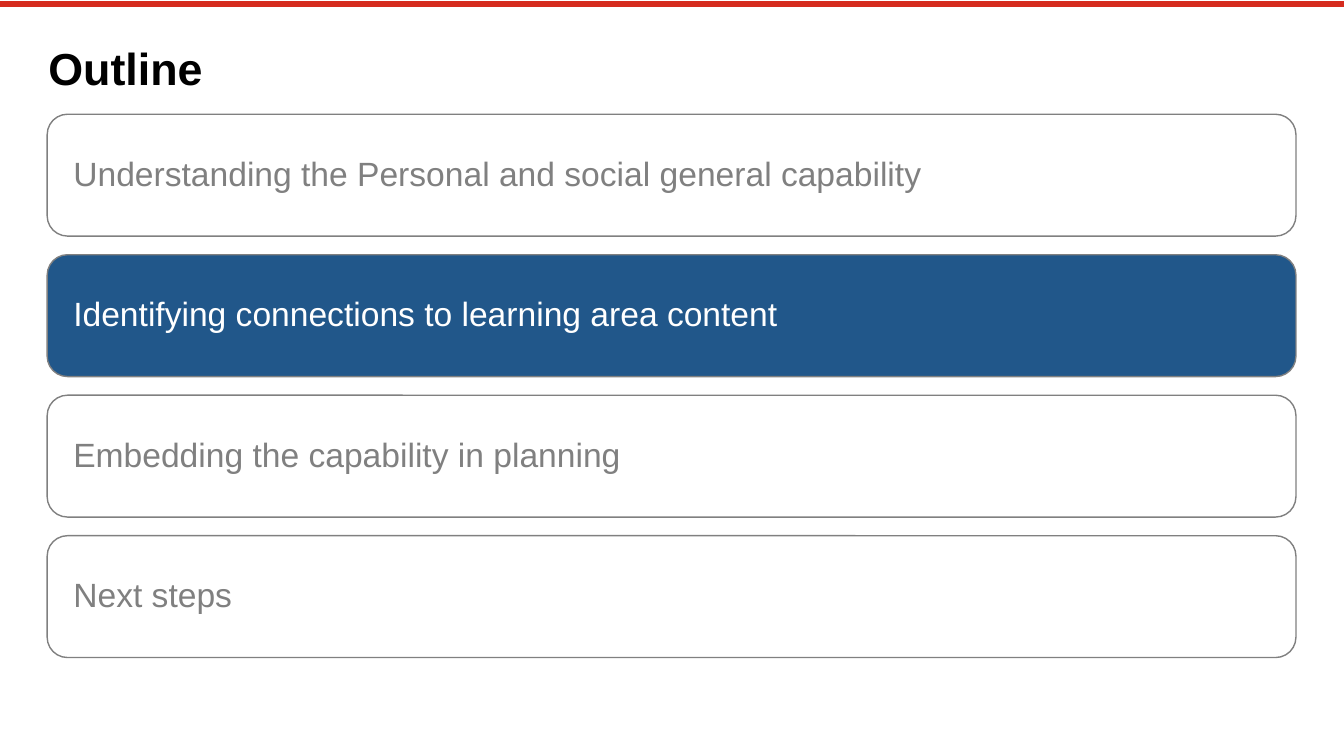
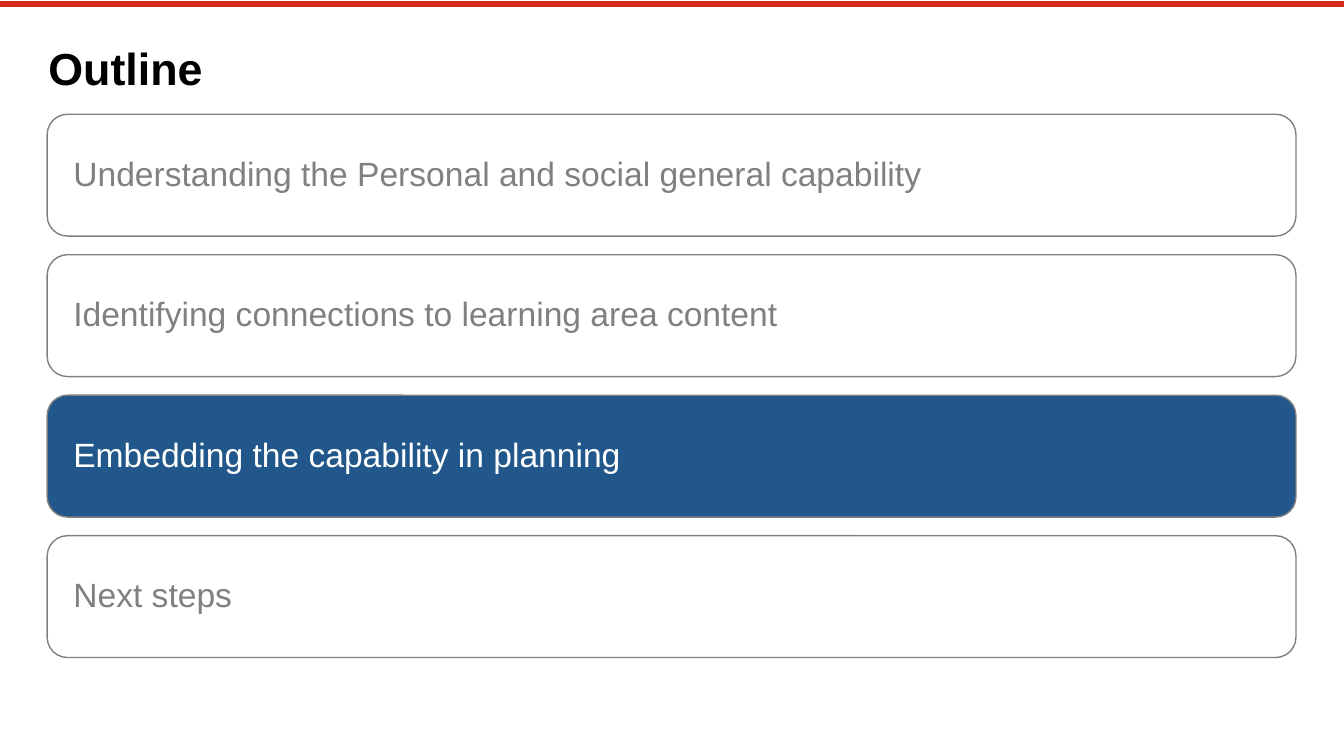
import pptx
import pptx.util
import pptx.dml.color
import pptx.enum.shapes
import pptx.enum.text
import pptx.oxml.ns
import lxml.etree

Cm, Pt = pptx.util.Cm, pptx.util.Pt
Kind = pptx.enum.shapes.MSO_SHAPE
Anchor = pptx.enum.text.MSO_ANCHOR
Align = pptx.enum.text.PP_ALIGN

TITLE = "Outline"
STEPS = [
    "Understanding the Personal and social general capability",
    "Identifying connections to learning area content",
    "Embedding the capability in planning",
    "Next steps",
]
ACTIVE = [1, 2]

RED, BLUE, GREY, WHITE, BLACK = "D52B1E", "21578A", "808080", "FFFFFF", "000000"
WIDE, HIGH = 33.87, 19.05
LEFT, TOP, WIDTH, HEIGHT, GAP = 1.19, 2.88, 31.47, 3.07, 0.47

HEAD = {"name": "Arial", "size": Pt(32), "bold": True}
BODY = {"name": "Arial", "size": Pt(24), "bold": False}
FLUSH = {"margin_left": 0, "margin_top": 0, "margin_right": 0,
         "margin_bottom": 0, "vertical_anchor": Anchor.TOP, "word_wrap": True}
INSET = {"margin_left": Cm(0.51), "margin_top": Cm(0.2), "margin_right": Cm(0.2),
         "margin_bottom": Cm(0.2), "vertical_anchor": Anchor.MIDDLE, "word_wrap": True}


def color(code):
    return pptx.dml.color.RGBColor.from_string(code)


def apply(item, style):
    for key, value in style.items():
        setattr(item, key, value)


def write(shape, text, frame, font, ink, lead):
    apply(shape.text_frame, frame)
    para = shape.text_frame.paragraphs[0]
    para.text = text
    apply(para, {"alignment": Align.LEFT, "line_spacing": lead})
    apply(para.runs[0].font, font)
    para.runs[0].font.color.rgb = color(ink)


def add_band(slide):
    band = slide.shapes.add_connector(
        pptx.enum.shapes.MSO_CONNECTOR.STRAIGHT, 0, Cm(0.1), Cm(WIDE), Cm(0.1))
    band.line.color.rgb = color(RED)
    band.line.width = Pt(4.2)
    lxml.etree.SubElement(band.element.spPr, pptx.oxml.ns.qn("a:effectLst"))


def add_title(slide):
    box = slide.shapes.add_textbox(Cm(1.22), Cm(1.02), Cm(WIDTH), Cm(1.32))
    write(box, TITLE, FLUSH, HEAD, BLACK, 1.0)


def add_step(slide, row, text, active):
    top = TOP + row * (HEIGHT + GAP)
    card = slide.shapes.add_shape(
        Kind.ROUNDED_RECTANGLE, Cm(LEFT), Cm(top), Cm(WIDTH), Cm(HEIGHT))
    card.shadow.inherit = False
    card.fill.solid()
    card.fill.fore_color.rgb = color(BLUE if active else WHITE)
    card.line.color.rgb = color(GREY)
    card.line.width = Pt(1)
    write(card, text, INSET, BODY, WHITE if active else GREY, 0.9)


def main():
    deck = pptx.Presentation()
    deck.slide_width, deck.slide_height = Cm(WIDE), Cm(HIGH)
    for active in ACTIVE:
        slide = deck.slides.add_slide(deck.slide_layouts[6])
        add_band(slide)
        add_title(slide)
        for row, text in enumerate(STEPS):
            add_step(slide, row, text, row == active)
    deck.save("out.pptx")


if __name__ == "__main__":
    main()
